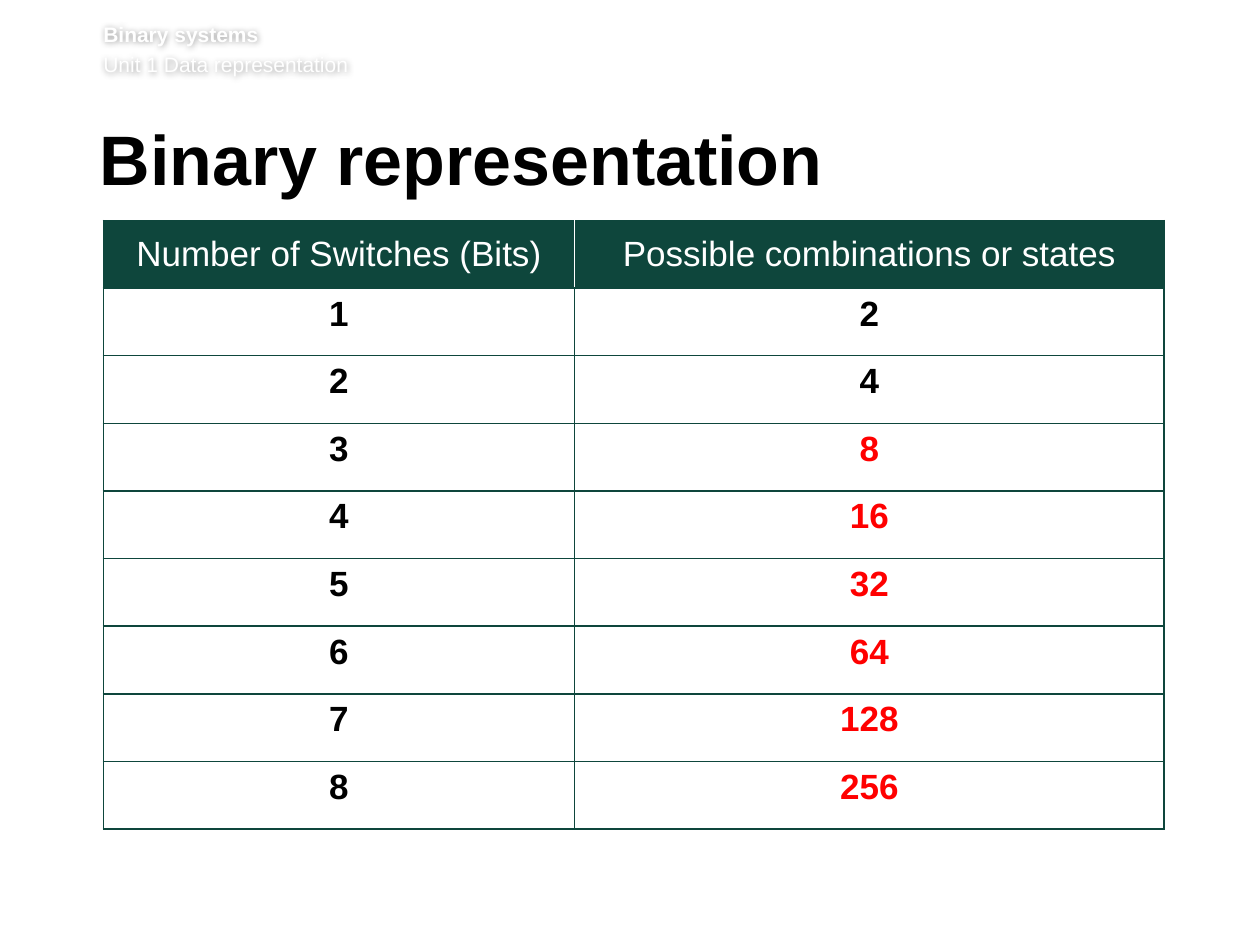
from lxml import etree
from pptx import Presentation
from pptx.dml.color import RGBColor
from pptx.enum.text import MSO_ANCHOR, PP_ALIGN
from pptx.oxml.ns import qn
from pptx.util import Inches, Pt

CENTER = PP_ALIGN.CENTER
TOP, MIDDLE = MSO_ANCHOR.TOP, MSO_ANCHOR.MIDDLE
FONT = "Arial"
COLORS = {"green": "0E463C", "white": "FFFFFF", "black": "000000", "red": "FF0000"}

# Content
RUNNING_HEAD = [("Binary systems", True), ("Unit 1 Data representation", False)]
TITLE = "Binary representation"
HEADERS = ["Number of Switches (Bits)", "Possible combinations or states"]
BITS = range(1, 9)
GIVEN_BITS = 2  # rows up to here are given, later answers are red
COLUMN_WIDTHS = [3.74, 4.68]
TABLE_HEIGHT = 4.83


def add_run(p, text, size, color, bold):
    r = p.add_run()
    r.text = text
    r.font.name = FONT
    r.font.size = Pt(size)
    r.font.bold = bold
    r.font.color.rgb = RGBColor.from_string(COLORS[color])


def add_textbox(slide, box, margins):
    sp = slide.shapes.add_textbox(*map(Inches, box))
    tf = sp.text_frame
    tf.word_wrap = True
    tf.margin_left, tf.margin_top, tf.margin_right, tf.margin_bottom = map(Inches, margins)
    return sp


def add_shadow(sp):
    effects = etree.SubElement(sp._element.spPr, qn("a:effectLst"))
    shadow = etree.SubElement(effects, qn("a:outerShdw"), blurRad=str(Pt(4)),
                              dist="0", dir="0", algn="ctr", rotWithShape="0")
    color = etree.SubElement(shadow, qn("a:srgbClr"), val=COLORS["black"])
    etree.SubElement(color, qn("a:alpha"), val="40000")


def set_border(cell, side, color):
    ln = etree.SubElement(cell._tc.get_or_add_tcPr(), qn(f"a:ln{side}"), w=str(Pt(1)))
    fill = etree.SubElement(ln, qn("a:solidFill"))
    etree.SubElement(fill, qn("a:srgbClr"), val=COLORS[color])


def fill_cell(cell, text, color, fill, inner_side=None):
    header = fill == "green"
    for side in "LRTB":
        set_border(cell, side, "white" if side == inner_side else "green")
    cell.fill.solid()
    cell.fill.fore_color.rgb = RGBColor.from_string(COLORS[fill])
    cell.vertical_anchor = MIDDLE if header else TOP
    p = cell.text_frame.paragraphs[0]
    p.alignment = CENTER
    add_run(p, text, 20, color, not header)


prs = Presentation()
prs.slide_width, prs.slide_height = Inches(10), Inches(7.5)
slide = prs.slides.add_slide(prs.slide_layouts[6])

# Running head
sp = add_textbox(slide, (0.82, 0.17, 8.82, 0.49), (0, 0, 0, 0.05))
add_shadow(sp)
tf = sp.text_frame
for i, (text, bold) in enumerate(RUNNING_HEAD):
    p = tf.add_paragraph() if i else tf.paragraphs[0]
    if i:
        p.space_before = Pt(2.9)
    add_run(p, text, 12, "white", bold)

# Title
sp = add_textbox(slide, (0.79, 0.99, 8.55, 0.73), (0, 0.05, 0.1, 0.05))
p = sp.text_frame.paragraphs[0]
p.line_spacing = Pt(39)
add_run(p, TITLE, 40, "black", True)

# Table of switches and states
row_count = len(BITS) + 1
table = slide.shapes.add_table(
    row_count, len(HEADERS), Inches(0.82), Inches(1.75),
    Inches(sum(COLUMN_WIDTHS)), Inches(TABLE_HEIGHT)).table
for column, width in zip(table.columns, COLUMN_WIDTHS):
    column.width = Inches(width)
for row in table.rows:
    row.height = Inches(TABLE_HEIGHT / row_count)
for c, (text, inner_side) in enumerate(zip(HEADERS, "RL")):
    fill_cell(table.cell(0, c), text, "white", "green", inner_side)
for bits in BITS:
    answer_color = "black" if bits <= GIVEN_BITS else "red"
    fill_cell(table.cell(bits, 0), str(bits), "black", "white")
    fill_cell(table.cell(bits, 1), str(2 ** bits), answer_color, "white")

prs.save("out.pptx")
